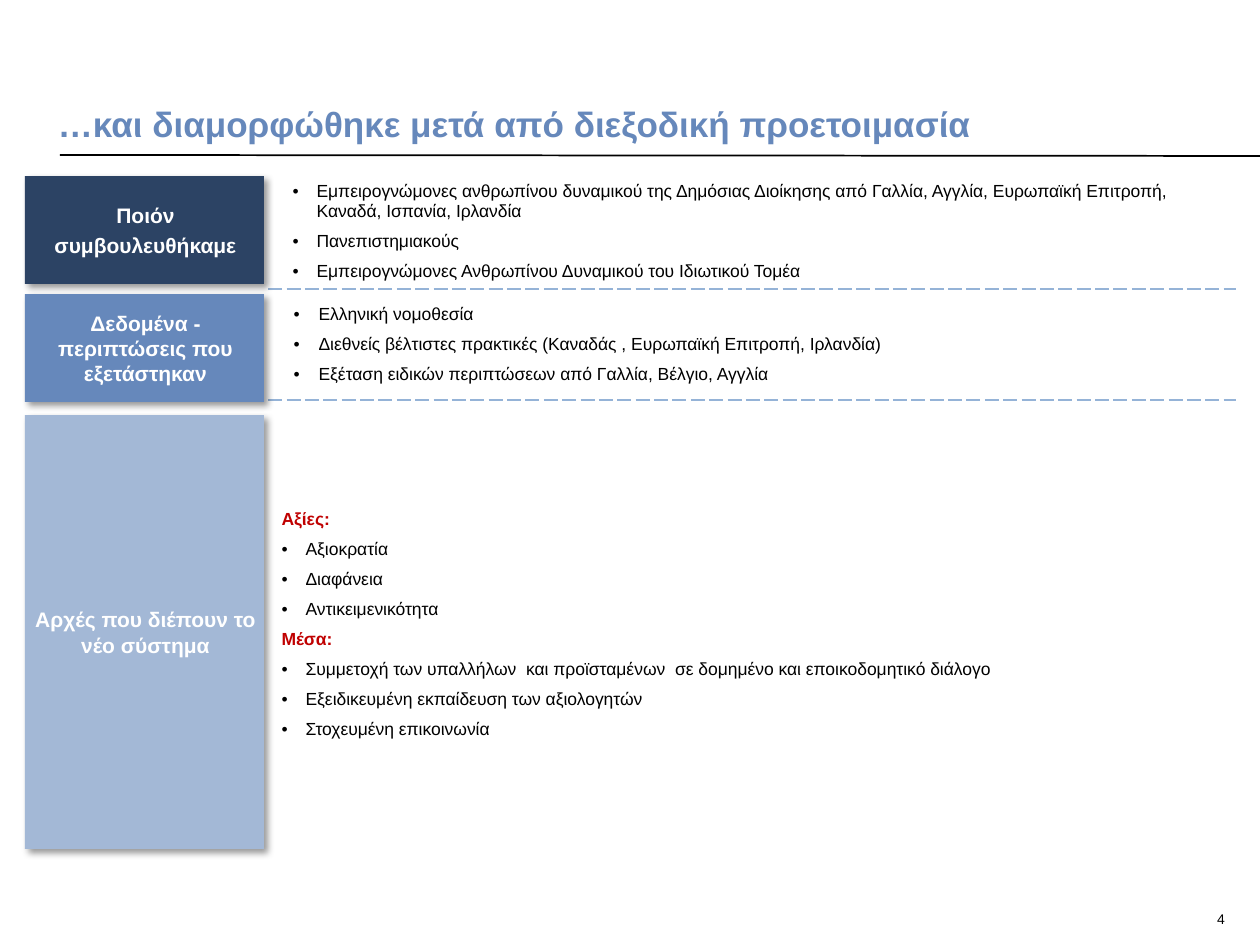
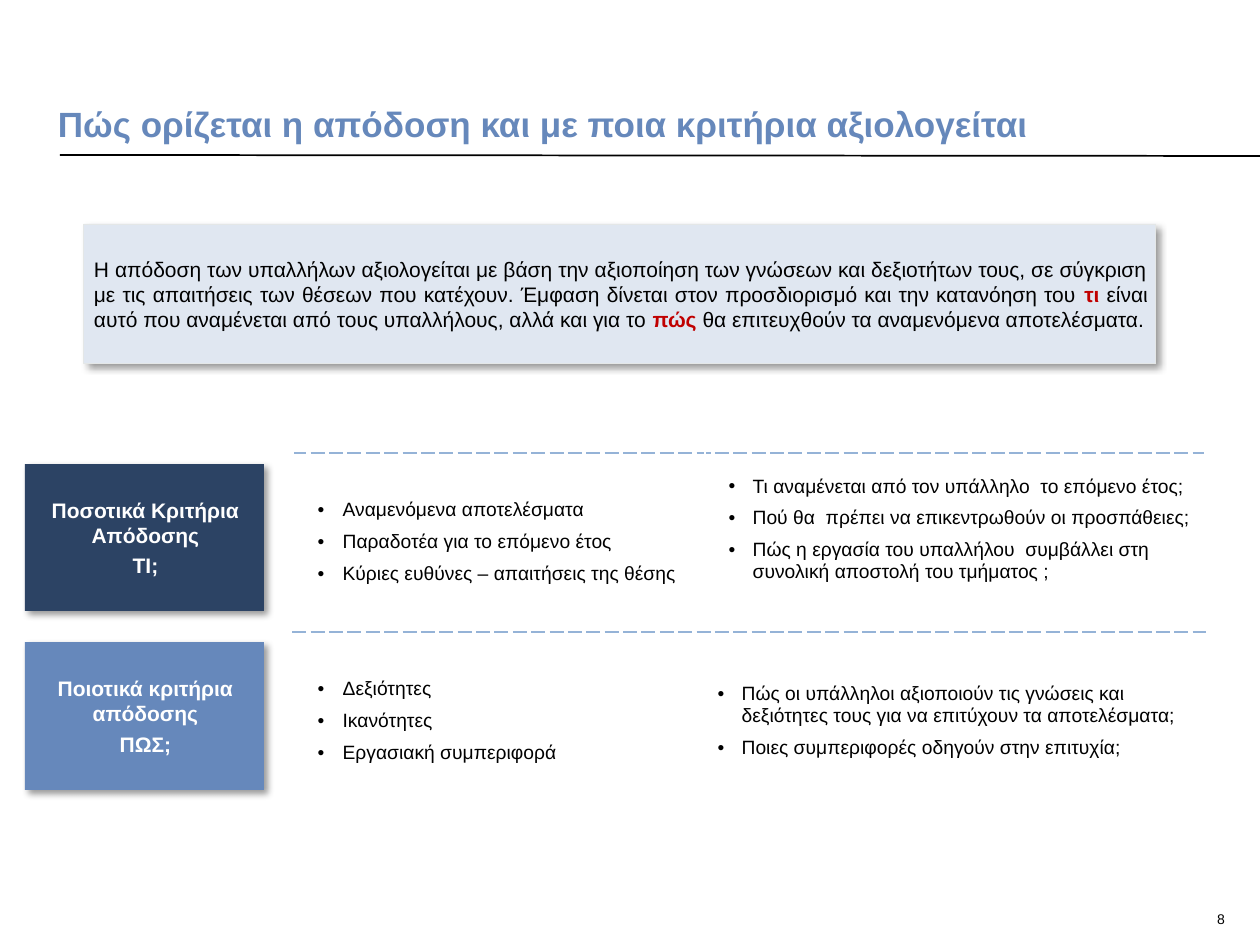
"""Build two slides on how the staff appraisal system was prepared and what it measures."""
from lxml import etree
from pptx import Presentation
from pptx import util as u
from pptx.dml.color import RGBColor
from pptx.enum import shapes, text
from pptx.oxml import parse_xml
from pptx.oxml.ns import nsdecls, qn


class Theme:
    font = "Arial"
    black, white, accent = "000000", "FFFFFF", "C00000"
    navy, blue, light, pale = "2C4364", "6688BB", "A3B8D6", "E0E7F1"
    dash, pale_edge = "95B3D7", "E4E7E7"
    title_size, label_size, number_size = 20, 12, 8


def px(length):
    return u.Emu(round(length * 914400 / 126))


def write(frame, lines, size, color=Theme.black, bold=False, align=text.PP_ALIGN.LEFT,
          before=0, after=0, indent=0, hang=0):
    """Fill a text frame; parts between asterisks are accented, and hang adds bullets."""
    frame.word_wrap = True
    frame.text = "\n".join(lines)
    for index, (para, line) in enumerate(zip(frame.paragraphs, lines)):
        para.text = ""
        para.alignment = align
        para.space_before = u.Pt(before if index else 0)
        para.space_after = u.Pt(after)
        if hang and not line.startswith("*"):
            properties = para._p.get_or_add_pPr()
            properties.set("marL", str(px(indent)))
            properties.set("indent", str(px(-hang)))
            etree.SubElement(properties, qn("a:buFont")).set("typeface", Theme.font)
            etree.SubElement(properties, qn("a:buChar")).set("char", "•")
        for part, words in enumerate(line.split("*")):
            if words:
                span = para.add_run()
                span.text = words
                span.font.name = Theme.font
                span.font.size = u.Pt(size)
                span.font.bold = bold or part % 2 == 1
                span.font.color.rgb = RGBColor.from_string(Theme.accent if part % 2 else color)


label_style = dict(size=Theme.label_size, color=Theme.white, bold=True,
                   align=text.PP_ALIGN.CENTER, after=3)
intro_style = dict(size=Theme.label_size, align=text.PP_ALIGN.JUSTIFY)
label_left, label_width = 25, 239

pages = [
    dict(
        title="…και διαμορφώθηκε μετά από διεξοδική προετοιμασία",
        number="4",
        table=dict(
            left=14, top=175, columns=[255, 966], rows=[114, 111, 450],
            size=10, ruled_edges=(1, 2),
            cells={
                (0, 1): (35, 24, 0, [
                    "Εμπειρογνώμονες ανθρωπίνου δυναμικού της Δημόσιας Διοίκησης από Γαλλία, "
                    "Αγγλία, Ευρωπαϊκή Επιτροπή, Καναδά, Ισπανία, Ιρλανδία",
                    "Πανεπιστημιακούς",
                    "Εμπειρογνώμονες Ανθρωπίνου Δυναμικού του Ιδιωτικού Τομέα"]),
                (1, 1): (37, 25, 0, [
                    "Ελληνική νομοθεσία",
                    "Διεθνείς βέλτιστες πρακτικές (Καναδάς , Ευρωπαϊκή Επιτροπή, Ιρλανδία)",
                    "Εξέταση ειδικών περιπτώσεων από Γαλλία, Βέλγιο, Αγγλία"]),
                (2, 1): (24, 24, 0, [
                    "*Αξίες:*", "Αξιοκρατία", "Διαφάνεια", "Αντικειμενικότητα",
                    "*Μέσα:*",
                    "Συμμετοχή των υπαλλήλων  και προϊσταμένων  σε δομημένο και "
                    "εποικοδομητικό διάλογο",
                    "Εξειδικευμένη εκπαίδευση των αξιολογητών",
                    "Στοχευμένη επικοινωνία"]),
            }),
        boxes=[
            (label_left, 176, label_width, 108, Theme.navy, None, label_style,
             ["Ποιόν", "συμβουλευθήκαμε"]),
            (label_left, 294, label_width, 108, Theme.blue, None, label_style,
             ["Δεδομένα - περιπτώσεις που εξετάστηκαν"]),
            (label_left, 415, label_width, 434, Theme.light, None, label_style,
             ["Αρχές που διέπουν το νέο σύστημα"]),
        ]),
    dict(
        title="Πώς ορίζεται η απόδοση και με ποια κριτήρια αξιολογείται",
        number="8",
        table=dict(
            left=293, top=453, columns=[412, 500], rows=[179, 179],
            size=11, ruled_edges=(0, 1),
            cells={
                (0, 0): (37, 25, 0, [
                    "Αναμενόμενα αποτελέσματα",
                    "Παραδοτέα για το επόμενο έτος",
                    "Κύριες ευθύνες – απαιτήσεις της θέσης"]),
                (0, 1): (35, 24, 26, [
                    "Τι αναμένεται από τον υπάλληλο  το επόμενο έτος;",
                    "Πού θα  πρέπει να επικεντρωθούν οι προσπάθειες;",
                    "Πώς η εργασία του υπαλλήλου  συμβάλλει στη συνολική αποστολή "
                    "του τμήματος ;"]),
                (1, 0): (37, 25, 0, [
                    "Δεξιότητες", "Ικανότητες", "Εργασιακή συμπεριφορά"]),
                (1, 1): (24, 24, 0, [
                    "Πώς οι υπάλληλοι αξιοποιούν τις γνώσεις και δεξιότητες τους για να "
                    "επιτύχουν τα αποτελέσματα;",
                    "Ποιες συμπεριφορές οδηγούν στην επιτυχία;"]),
            }),
        boxes=[
            (label_left, 464, label_width, 147, Theme.navy, None, label_style,
             ["Ποσοτικά Κριτήρια Απόδοσης", "ΤΙ;"]),
            (label_left, 642, label_width, 148, Theme.blue, None, label_style,
             ["Ποιοτικά κριτήρια απόδοσης", "ΠΩΣ;"]),
            (84, 224, 1072, 140, Theme.pale, Theme.pale_edge, intro_style,
             ["Η απόδοση των υπαλλήλων αξιολογείται με βάση την αξιοποίηση των γνώσεων και "
              "δεξιοτήτων τους, σε σύγκριση με τις απαιτήσεις των θέσεων που κατέχουν. Έμφαση "
              "δίνεται στον προσδιορισμό και την κατανόηση του *τι* είναι αυτό που αναμένεται "
              "από τους υπαλλήλους, αλλά και για το *πώς* θα επιτευχθούν τα αναμενόμενα "
              "αποτελέσματα."]),
        ]),
]

deck = Presentation()
deck.slide_width, deck.slide_height = px(1260), px(945)

for content in pages:
    page = deck.slides.add_slide(deck.slide_layouts[6])

    rule = page.shapes.add_connector(shapes.MSO_CONNECTOR.STRAIGHT,
                                     px(60), px(155), px(1260), px(156))
    rule.line.color.rgb = RGBColor.from_string(Theme.black)
    rule.line.width = u.Pt(1)
    etree.SubElement(rule._element.spPr, qn("a:effectLst"))

    title = page.shapes.add_textbox(px(58), px(25), px(1187), px(119)).text_frame
    title.vertical_anchor = text.MSO_ANCHOR.BOTTOM
    number = page.shapes.add_textbox(px(1171), px(905), px(54), px(31)).text_frame
    for frame, top_margin in ((title, 0), (number, 5)):
        frame.margin_left = frame.margin_right = frame.margin_bottom = 0
        frame.margin_top = px(top_margin)
    write(title, [content["title"]], Theme.title_size, Theme.blue, bold=True)
    write(number, [content["number"]], Theme.number_size, align=text.PP_ALIGN.RIGHT)

    plan = content["table"]
    table = page.shapes.add_table(
        len(plan["rows"]), len(plan["columns"]), px(plan["left"]), px(plan["top"]),
        px(sum(plan["columns"])), px(sum(plan["rows"]))).table
    table.first_row = table.horz_banding = False
    for column, width in zip(table.columns, plan["columns"]):
        column.width = px(width)
    for row, height in zip(table.rows, plan["rows"]):
        row.height = px(height)
    for cell in table.iter_cells():
        cell.fill.background()
    for (row, column), (indent, hang, lift, lines) in plan["cells"].items():
        cell = table.cell(row, column)
        cell.vertical_anchor = text.MSO_ANCHOR.MIDDLE
        cell.margin_top = px(4)
        cell.margin_bottom = px(5 + lift)
        cell.fill.solid()
        cell.fill.fore_color.rgb = RGBColor.from_string(Theme.white)
        write(cell.text_frame, lines, plan["size"], before=3, after=3,
              indent=indent, hang=hang)
        for side, edge in (("lnB", row + 1), ("lnT", row)):
            if edge in plan["ruled_edges"]:
                cell._tc.get_or_add_tcPr().insert(0, parse_xml(
                    f'<a:{side} {nsdecls("a")} w="{u.Pt(1.5)}"><a:solidFill>'
                    f'<a:srgbClr val="{Theme.dash}"/></a:solidFill>'
                    f'<a:prstDash val="sysDash"/></a:{side}>'))

    for left, top, width, height, fill, edge, style, lines in content["boxes"]:
        box = page.shapes.add_shape(shapes.MSO_SHAPE.RECTANGLE,
                                    px(left), px(top), px(width), px(height))
        box.fill.solid()
        box.fill.fore_color.rgb = RGBColor.from_string(fill)
        if edge:
            box.line.color.rgb = RGBColor.from_string(edge)
            box.line.width = u.Pt(0.5)
        else:
            box.line.fill.background()
        box.shadow.inherit = False
        box._element.spPr.find(qn("a:effectLst")).append(parse_xml(
            f'<a:outerShdw {nsdecls("a")} blurRad="{u.Pt(4)}" dist="{u.Pt(3)}" dir="2700000" '
            f'algn="tl" rotWithShape="0"><a:srgbClr val="{Theme.black}">'
            '<a:alpha val="40000"/></a:srgbClr></a:outerShdw>'))
        frame = box.text_frame
        frame.vertical_anchor = text.MSO_ANCHOR.MIDDLE
        frame.margin_left, frame.margin_right = px(10), px(8)
        frame.margin_top = frame.margin_bottom = px(10)
        write(frame, lines, **style)

deck.save("out.pptx")
